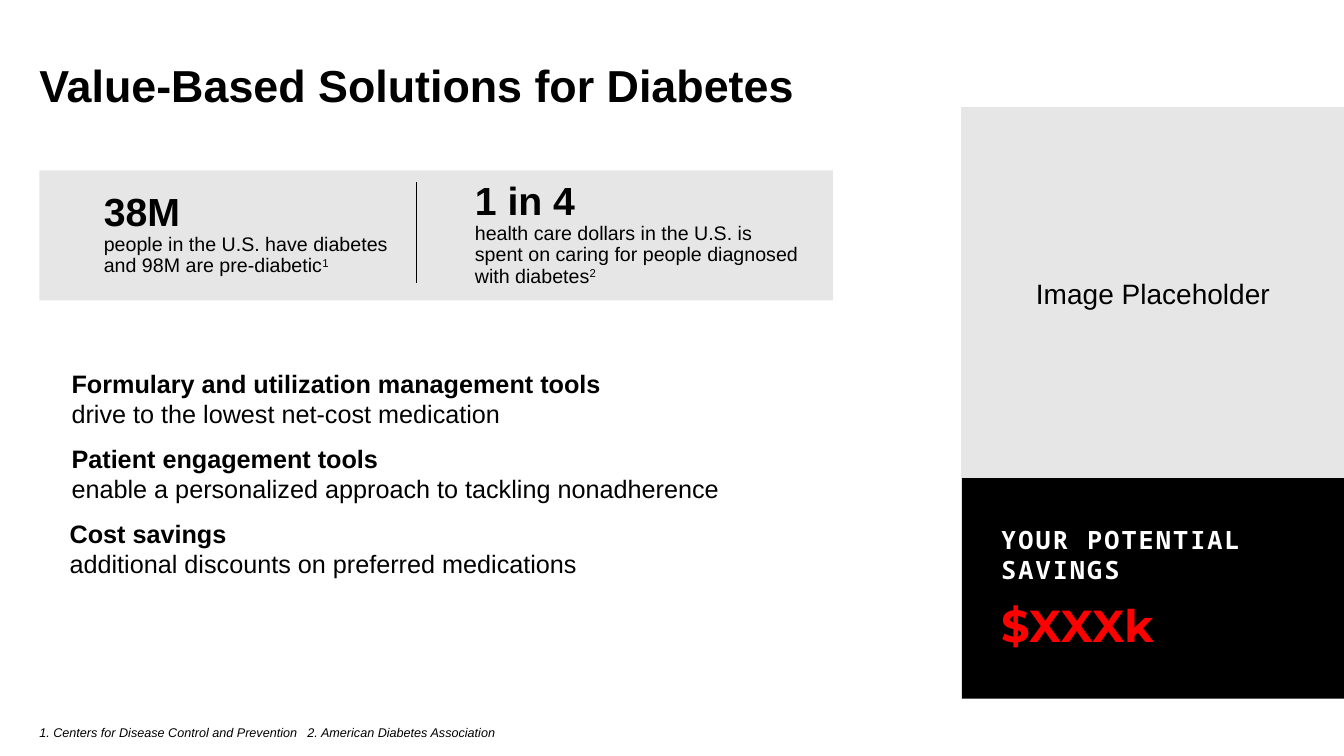
from lxml import etree
from pptx import Presentation
from pptx.dml.color import RGBColor
from pptx.enum.shapes import MSO_CONNECTOR, MSO_SHAPE
from pptx.enum.text import MSO_ANCHOR, PP_ALIGN
from pptx.oxml.ns import qn
from pptx.util import Inches, Pt

RECTANGLE = MSO_SHAPE.RECTANGLE
STRAIGHT = MSO_CONNECTOR.STRAIGHT
MIDDLE, BOTTOM = MSO_ANCHOR.MIDDLE, MSO_ANCHOR.BOTTOM
CENTER = PP_ALIGN.CENTER
BLACK, WHITE, GRAY, RED = "000000", "FFFFFF", "E7E6E6", "FF0000"

BENEFITS = [
    (0.71, "Formulary and utilization management tools",
     "drive to the lowest net-cost medication"),
    (0.71, "Patient engagement tools",
     "enable a personalized approach to tackling nonadherence"),
    (0.69, "Cost savings", "additional discounts on preferred medications"),
]
SOURCES = ["1. Centers for Disease Control and Prevention",
           "2. American Diabetes Association"]


def color(value):
    return RGBColor.from_string(value)


def add_panel(slide, left, top, width, height, fill):
    panel = slide.shapes.add_shape(
        RECTANGLE, Inches(left), Inches(top), Inches(width), Inches(height))
    panel.shadow.inherit = False
    panel.fill.solid()
    panel.fill.fore_color.rgb = color(fill)
    panel.line.fill.background()
    return panel


def add_text(slide, left, top, width, height):
    """Add a wrapping text box without margins and return its frame."""
    box = slide.shapes.add_textbox(
        Inches(left), Inches(top), Inches(width), Inches(height))
    frame = box.text_frame
    frame.word_wrap = True
    frame.margin_left = frame.margin_right = 0
    frame.margin_top = frame.margin_bottom = 0
    return frame


def style(para, size, font="Arial", fill=BLACK, bold=None):
    para.font.name = font
    para.font.size = Pt(size)
    para.font.color.rgb = color(fill)
    para.font.bold = bold


def add_span(para, text, **attributes):
    """Add a run with extra attributes such as baseline or spc."""
    span = para.add_run()
    span.text = text
    for name, value in attributes.items():
        span._r.get_or_add_rPr().set(name, value)
    return span


def add_title(slide, left, top, width, height):
    para = add_text(slide, left, top, width, height).paragraphs[0]
    para.text = "Value-Based Solutions for Diabetes"
    style(para, 32, bold=True)


def add_statistic(slide, left, top, width, height, figure, text, note):
    frame = add_text(slide, left, top, width, height)
    headline, detail = frame.paragraphs[0], frame.add_paragraph()
    headline.text = figure
    style(headline, 28, bold=True)
    add_span(detail, text)
    add_span(detail, note, baseline="30000")
    style(detail, 14)
    headline.line_spacing = detail.line_spacing = 0.9


def add_statistics_band(slide, left, top, width, height):
    add_panel(slide, left, top, width, height, GRAY)
    add_statistic(slide, left + 0.64, top + 0.22, 2.97, 0.85, "38M",
                  "people in the U.S. have diabetes and 98M are pre-diabetic", "1")
    add_statistic(slide, left + 4.32, top + 0.11, 3.22, 1.06, "1 in 4",
                  "health care dollars in the U.S. is spent on caring for "
                  "people diagnosed with diabetes", "2")
    middle = Inches(left + 3.74)
    divider = slide.shapes.add_connector(
        STRAIGHT, middle, Inches(top + 0.12), middle, Inches(top + 1.12))
    divider.line.color.rgb = color(BLACK)
    divider.line.width = Pt(0.5)
    etree.SubElement(divider._element.spPr, qn("a:effectLst"))


def add_benefits(slide, top, width, pitch):
    for index, (left, heading, detail) in enumerate(BENEFITS):
        frame = add_text(slide, left, top + index * pitch, width, 0.71)
        frame.margin_top = frame.margin_bottom = Inches(0.05)
        para = frame.paragraphs[0]
        add_span(para, heading).font.bold = True
        para.add_line_break()
        add_span(para, detail)
        style(para, 18)


def add_image_area(slide, left, top, width, height):
    panel = add_panel(slide, left, top, width, height, GRAY)
    panel.line.color.rgb = color(GRAY)
    panel.line.width = Pt(1)
    panel.text_frame.word_wrap = True
    panel.text_frame.vertical_anchor = MIDDLE
    para = panel.text_frame.paragraphs[0]
    para.text = "Image Placeholder"
    para.alignment = CENTER
    style(para, 20)


def add_savings(slide, left, top, width, height):
    add_panel(slide, left, top, width, height, BLACK)
    frame = add_text(slide, left + 0.39, top + 0.46, 3.02, 1.27)
    label, amount = frame.paragraphs[0], frame.add_paragraph()
    add_span(label, "YOUR POTENTIAL SAVINGS", spc="150")
    label.space_after = Pt(6)
    style(label, 18, "Noto Sans Mono", WHITE, True)
    amount.text = "$XXXk"
    amount.space_before = Pt(3)
    style(amount, 32, "Montserrat", RED, True)


def add_sources(slide, left, top, width, height):
    frame = add_text(slide, left, top, width, height)
    frame.vertical_anchor = BOTTOM
    para = frame.paragraphs[0]
    para.text = "\t".join(SOURCES)
    para.line_spacing = 1.2
    para.space_after = Pt(3)
    tabs = etree.SubElement(para._p.get_or_add_pPr(), qn("a:tabLst"))
    etree.SubElement(tabs, qn("a:tab"), pos=str(Inches(2.66)), algn="l")
    style(para, 9)
    para.font.italic = True


def main():
    deck = Presentation()
    deck.slide_width, deck.slide_height = Inches(13.33), Inches(7.5)
    slide = deck.slides.add_slide(deck.slide_layouts[6])
    add_title(slide, 0.39, 0.57, 8.3, 1.1)
    add_statistics_band(slide, 0.39, 1.69, 7.87, 1.29)
    add_benefits(slide, 3.6, 7.08, 0.745)
    add_savings(slide, 9.54, 4.74, 3.79, 2.19)
    add_image_area(slide, 9.54, 1.07, 3.79, 3.67)
    add_sources(slide, 0.39, 6.93, 5.7, 0.41)
    deck.save("out.pptx")


if __name__ == "__main__":
    main()
